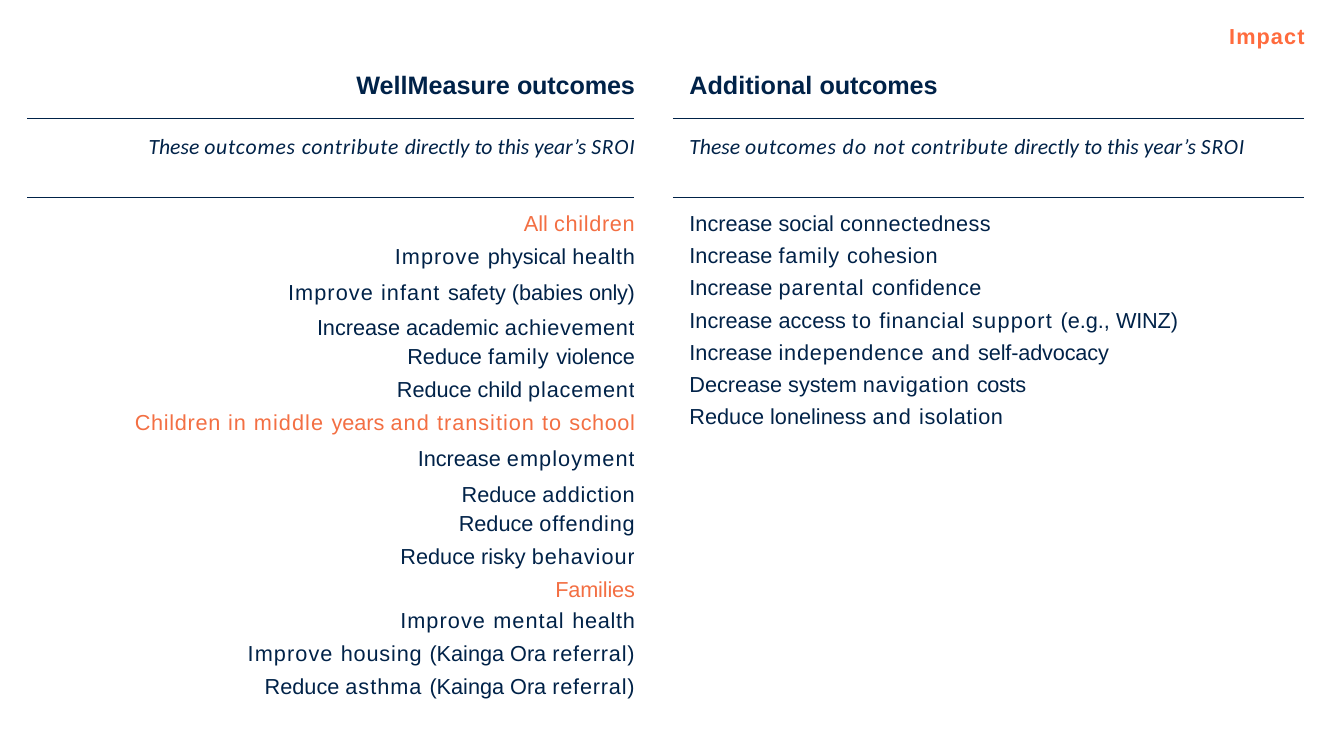
from itertools import groupby

from lxml import etree
from pptx import Presentation
from pptx import util as u
from pptx.dml.color import RGBColor
from pptx.enum import text
from pptx.oxml import ns

NAVY = RGBColor(0x00, 0x22, 0x48)
CORAL = RGBColor(0xF3, 0x6F, 0x43)
ORANGE = RGBColor(0xFF, 0x6B, 0x3D)
RIGHT, LEFT = text.PP_ALIGN.RIGHT, text.PP_ALIGN.LEFT

# Text styles
TITLE = {"name": "Arial", "size": u.Pt(15.5), "bold": True, "italic": False}
HEADING = {"name": "Arial", "size": u.Pt(18), "bold": True, "italic": False}
NOTE = {"name": "Calibri", "size": u.Pt(15.5), "bold": False, "italic": True}
ITEM = {"name": "Arial", "size": u.Pt(15.5), "bold": False, "italic": False}

# Letter spacing in points, by word; other words have none
HEADING_SPACING = {"outcomes": -0.1}
NOTE_SPACING = {"outcomes": 0.6, "contribute": 0.5, "do": 0.9, "not": 0.6, "SROI": 0.6}
ITEM_SPACING = {
    word: points
    for points, words in {
        -0.2: "only) costs",
        -0.1: "violence Families WINZ) self-advocacy",
        0.3: "connectedness",
        0.4: "school cohesion confidence isolation",
        0.5: "children Children health achievement addiction financial",
        0.6: "family placement offending housing referral) independence navigation",
        0.7: "in transition behaviour asthma parental",
        0.8: "Improve infant middle and to employment mental Impact",
        0.9: "support",
    }.items()
    for word in words.split()
}

# Outcomes with the space before each, in points
GROUPS = {"All children", "Children in middle years and transition to school", "Families"}
GOOD_OUTCOMES = [
    ("All children", 0),
    ("Improve physical health", 6),
    ("Improve infant safety (babies only)", 8.5),
    ("Increase academic achievement", 8),
    ("Reduce family violence", 3.5),
    ("Reduce child placement", 6),
    ("Children in middle years and transition to school", 6.5),
    ("Increase employment", 8.5),
    ("Reduce addiction", 8),
    ("Reduce offending", 3.5),
    ("Reduce risky behaviour", 6.5),
    ("Families", 6),
    ("Improve mental health", 5),
    ("Improve housing (Kainga Ora referral)", 6.5),
    ("Reduce asthma (Kainga Ora referral)", 6),
]
MORE_OUTCOMES = [
    (line, 5.7 if i else 0)
    for i, line in enumerate([
        "Increase social connectedness",
        "Increase family cohesion",
        "Increase parental confidence",
        "Increase access to financial support (e.g., WINZ)",
        "Increase independence and self-advocacy",
        "Decrease system navigation costs",
        "Reduce loneliness and isolation",
    ])
]


def apply(obj, values):
    for name, value in values.items():
        setattr(obj, name, value)


def add_words(p, line, style, color, spacing):
    """Write a line as runs of words that share one letter spacing."""
    chunks = [(points, " ".join(words))
              for points, words in groupby(line.split(), lambda w: spacing.get(w, 0))]
    for i, (points, words) in enumerate(chunks):
        r = p.add_run()
        r.text = words if i == len(chunks) - 1 else words + " "
        apply(r.font, style)
        r.font.color.rgb = color
        if points:
            r.font._element.set("spc", str(round(points * 100)))


def add_rule(cell, side):
    ln = etree.Element(ns.qn("a:ln" + side), w=str(u.Pt(0.5)))
    fill = etree.SubElement(ln, ns.qn("a:solidFill"))
    etree.SubElement(fill, ns.qn("a:srgbClr"), val=str(NAVY))
    cell._tc.get_or_add_tcPr().insert(0, ln)


def fill_cell(cell, lines, style, spacing, align, top):
    edge = u.Pt(0) if align == RIGHT else u.Pt(11.5)
    apply(cell, {"margin_left": edge, "margin_right": 0, "margin_bottom": 0,
                 "margin_top": u.Pt(top), "vertical_anchor": text.MSO_ANCHOR.TOP})
    tf = cell.text_frame
    for i, (line, before) in enumerate(lines):
        p = tf.add_paragraph() if i else tf.paragraphs[0]
        apply(p, {"alignment": align, "space_before": u.Pt(before)})
        add_words(p, line, style, CORAL if line in GROUPS else NAVY, spacing)


def add_title(s, line):
    sp = s.shapes.title
    apply(sp, {"left": u.Pt(878), "top": u.Pt(15.1), "width": u.Pt(58), "height": u.Pt(21)})
    tf = sp.text_frame
    apply(tf, {"margin_left": 0, "margin_right": 0, "margin_top": u.Pt(1.4),
               "margin_bottom": 0, "word_wrap": True,
               "vertical_anchor": text.MSO_ANCHOR.TOP,
               "auto_size": text.MSO_AUTO_SIZE.NONE})
    p = tf.paragraphs[0]
    apply(p, {"alignment": LEFT, "line_spacing": 1.0})
    add_words(p, line, TITLE, ORANGE, ITEM_SPACING)


def add_outcomes_table(s):
    widths, heights = (433.5, 27.5, 450), (34.8, 56.2, 384)
    table = s.shapes.add_table(3, 3, u.Pt(20), u.Pt(49.7),
                               u.Pt(sum(widths)), u.Pt(sum(heights))).table
    apply(table, {"first_row": False, "horz_banding": False})
    for col, width in zip(table.columns, widths):
        col.width = u.Pt(width)
    for row, height in zip(table.rows, heights):
        row.height = u.Pt(height)
    for cell in table.iter_cells():
        cell.fill.background()

    # Outer columns hold text; the middle one is a gap
    columns = [
        (0, RIGHT, "WellMeasure outcomes",
         "These outcomes contribute directly to this year’s SROI", GOOD_OUTCOMES),
        (2, LEFT, "Additional outcomes",
         "These outcomes do not contribute directly to this year’s SROI", MORE_OUTCOMES),
    ]
    for col, align, heading, note, outcomes in columns:
        rows = [
            ([(heading, 0)], HEADING, HEADING_SPACING, 1.4, "B"),
            ([(note, 0)], NOTE, NOTE_SPACING, 10.8, "BT"),
            (outcomes, ITEM, ITEM_SPACING, 10.7, "T"),
        ]
        for row, (lines, style, spacing, top, sides) in enumerate(rows):
            cell = table.cell(row, col)
            fill_cell(cell, lines, style, spacing, align, top)
            for side in sides:
                add_rule(cell, side)


def main():
    prs = Presentation()
    apply(prs, {"slide_width": u.Pt(960), "slide_height": u.Pt(540)})
    s = prs.slides.add_slide(prs.slide_layouts[5])
    add_title(s, "Impact")
    add_outcomes_table(s)
    prs.save("out.pptx")


if __name__ == "__main__":
    main()
